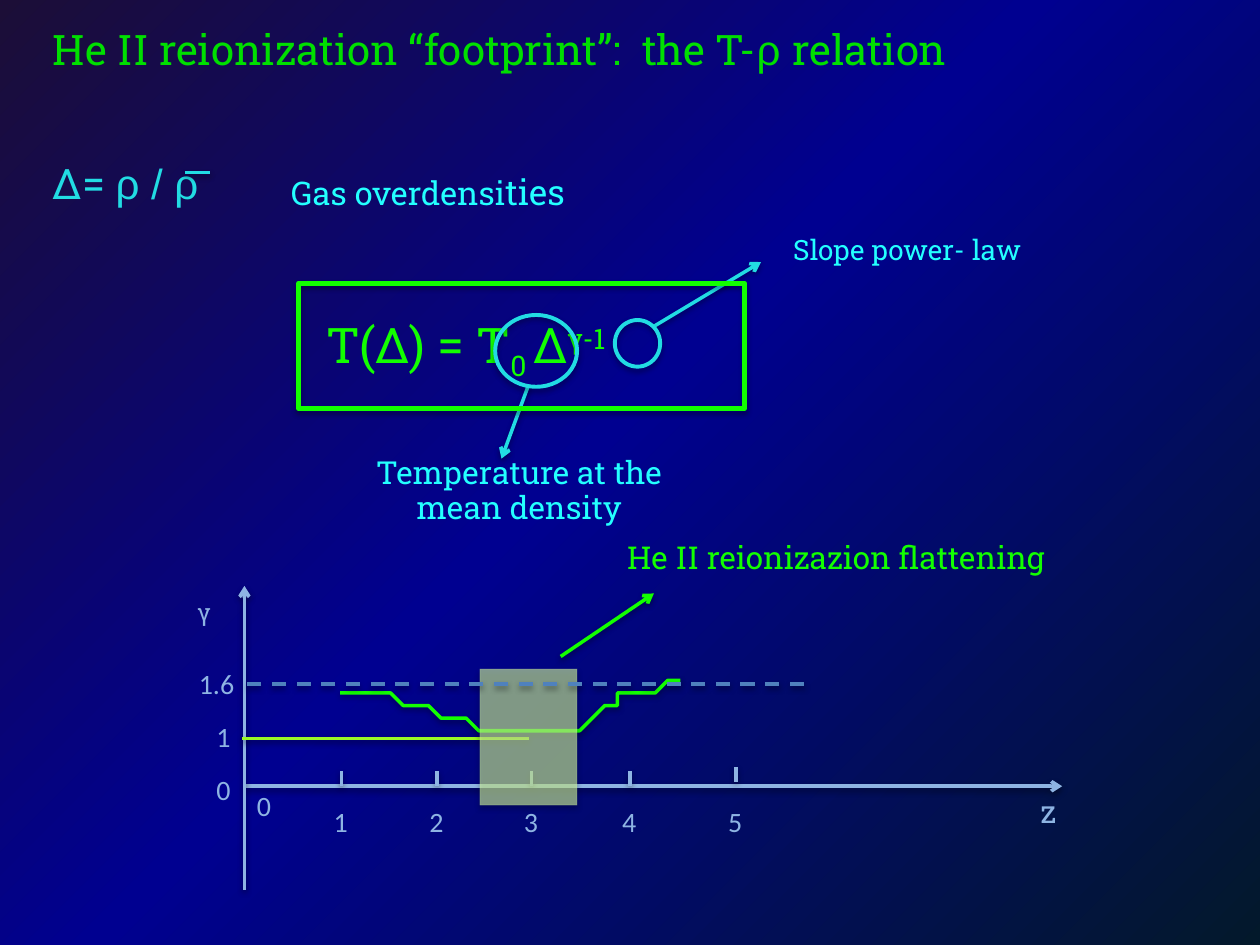
"""Build a slide on the temperature-density relation after He II reionization."""
from lxml import etree
from pptx import Presentation
from pptx import util as u
from pptx.dml.color import RGBColor
from pptx.enum import dml, shapes, text
from pptx.oxml import parse_xml
from pptx.oxml.ns import nsdecls, qn

TITLE_GREEN = RGBColor(0x00, 0xDF, 0x00)
GREEN = RGBColor(0x13, 0xFF, 0x00)
LIME = RGBColor(0x9A, 0xF8, 0x26)
PALE_LIME = RGBColor(0xD2, 0xF8, 0x9A)
CYAN = RGBColor(0x22, 0xDC, 0xE3)
BRIGHT_CYAN = RGBColor(0x24, 0xFF, 0xFF)
AXIS_BLUE = RGBColor(0x8E, 0xB4, 0xE3)
DASH_BLUE = RGBColor(0x4F, 0x81, 0xBD)
SLAB, SANS, LABEL = "Roboto Slab", "Arial", "Calibri"

prs = Presentation()
prs.slide_width, prs.slide_height = u.Inches(10), u.Inches(7.5)
GRID = prs.slide_width / 100
s = prs.slides.add_slide(prs.slide_layouts[5])

stops = "".join(
    f'<a:gs pos="{pos * 1000}"><a:srgbClr val="{color}"/></a:gs>'
    for pos, color in [(0, "1C0E37"), (47, "000090"), (100, "03192B")])
s.background.fill.solid()
bg_pr = s.background.fill._xPr
bg_pr.replace(bg_pr[0], parse_xml(
    f'<a:gradFill {nsdecls("a")} rotWithShape="1"><a:gsLst>{stops}</a:gsLst><a:path path="circle">'
    '<a:fillToRect r="100000" b="100000"/></a:path></a:gradFill>'))


def write(sp, runs, size, color, align=text.PP_ALIGN.LEFT):
    tf = sp.text_frame
    tf.word_wrap = True
    tf.auto_size = text.MSO_AUTO_SIZE.NONE
    tf.vertical_anchor = text.MSO_ANCHOR.TOP
    p = tf.paragraphs[0]
    p.alignment = align
    p.line_spacing = 0.92 if size == 18.1 else 1.0
    for words, font, base, *own_size in runs:
        r = p.add_run()
        r.text = words
        r.font.name = font
        r.font.size = u.Pt(own_size[0] if own_size else size)
        r.font.color.rgb = color
        if base:
            r._r.get_or_add_rPr().set("baseline", str(base * 1000))


def outline(sp, color, width, arrow=False, alpha=38, drop=20000):
    sp.line.color.rgb = color
    sp.line.width = u.Pt(width)
    if arrow:
        etree.SubElement(sp.line._get_or_add_ln(), qn("a:tailEnd")).set("type", "arrow")
    sp._element.spPr.append(parse_xml(
        f'<a:effectLst {nsdecls("a")}><a:outerShdw blurRad="40000" dist="{drop}" dir="5400000" '
        f'rotWithShape="0"><a:srgbClr val="000000"><a:alpha val="{alpha}000"/></a:srgbClr>'
        '</a:outerShdw></a:effectLst>'))


title = s.shapes.title
title.left, title.top, title.width, title.height = [int(v * GRID) for v in (3.2, 1.4, 94.1, 5)]
write(title, [("He II reionization “footprint”:  the T-", SLAB, 0), ("ρ ", SANS, 0),
              ("relation", SLAB, 0)], 24, TITLE_GREEN)

CENTER, LEFT = text.PP_ALIGN.CENTER, text.PP_ALIGN.LEFT
captions = [
    ((24.9, 24.5, 32.8, 5.7), [("T(Δ) = T", SLAB, 0), ("0 ", SLAB, -25), ("Δ", SLAB, 0),
                               ("γ-1", SLAB, 30)], 28, GREEN, LEFT),
    ((3.2, 12, 19.1, 5), [("Δ= ", SLAB, 0), ("ρ / ρ", SANS, 0)], 24, CYAN, LEFT),
    ((20.5, 13, 26.9, 5), [("Gas overdensi", SLAB, 0), ("ties", SLAB, 0, 20.1)],
     18.6, BRIGHT_CYAN, CENTER),
    ((25.5, 35.7, 31.4, 6.5), [("Temperature at the mean density", SLAB, 0)],
     18.1, BRIGHT_CYAN, CENTER),
    ((61.2, 18, 21.6, 5.1), [("Slope power- law", SLAB, 0)], 16, BRIGHT_CYAN, CENTER),
    ((48.8, 42.2, 42.4, 4), [("He II reionizazion flattening", SLAB, 0)], 18, GREEN, LEFT),
    ((81.6, 62.4, 3.7, 4), [("z", SLAB, 0)], 18, AXIS_BLUE, LEFT),
    ((14.7, 46.5, 3.7, 3.7), [("γ", SLAB, 30)], 24, AXIS_BLUE, LEFT),
]
lines = [
    (14.7, 13.7, 16.7, 13.7, CYAN, False),
    (41.9, 30.7, 39.8, 36.4, CYAN, True),
    (51.9, 25.9, 60.4, 20.8, CYAN, True),
    (19.4, 62.4, 84.3, 62.4, AXIS_BLUE, True),
    (19.4, 70.6, 19.4, 46.5, AXIS_BLUE, True),
    (19.2, 58.6, 42, 58.6, LIME, False),
    (44.5, 52.1, 51.9, 47.1, GREEN, True),
]
axis_labels = [("0", 19.4, 62.1), ("0", 16.2, 60.8), ("1", 16.2, 56.6), ("1.6", 14.8, 52.4)]
ticks = [(27.1, 61.2), (34.7, 61.2), (42.2, 61.2), (50, 61.2), (58.4, 60.9)]
for number, (x, y) in enumerate(ticks, 1):
    lines.append((x, y, x, y + 1.15, AXIS_BLUE, False))
    axis_labels.append((str(number), x - 1.6, 63.4))
for words, x, y in axis_labels:
    captions.append(((x, y, 6.3, 3.7), [(words, LABEL, 0)], 16, AXIS_BLUE, LEFT))

for box, runs, size, color, align in captions:
    write(s.shapes.add_textbox(*[int(v * GRID) for v in box]), runs, size, color, align)

for *ends, color, arrow in lines:
    line = s.shapes.add_connector(shapes.MSO_CONNECTOR.STRAIGHT, *[int(v * GRID) for v in ends])
    outline(line, color, 2, arrow)

curve = [(27, 54.7), (28.4, 54.8), (30, 55.1), (31, 55.3), (32.1, 55.6), (33.7, 56),
         (34.5, 56.3), (35.2, 56.6), (35.9, 57), (36.9, 57.4), (37.7, 57.7), (38.5, 57.9),
         (39.3, 58.1), (40.7, 58.2), (41.8, 58.25), (43.3, 58.1), (44.7, 57.8), (45.7, 57.5),
         (46.7, 57), (47.6, 56.3), (48.6, 55.7), (49.4, 55.4), (50.9, 54.9), (51.9, 54.6),
         (53, 54.4), (54.5, 54.3)]
fb = s.shapes.build_freeform(*curve[0], scale=GRID)
fb.add_line_segments(curve[1:], close=False)
slope_curve = fb.convert_to_shape()
slope_curve.fill.background()
outline(slope_curve, GREEN, 2)

RECT, OVAL = shapes.MSO_SHAPE.RECTANGLE, shapes.MSO_SHAPE.OVAL
for kind, box, color, width, fill in [
        (RECT, (23.7, 22.5, 35.4, 9.9), GREEN, 3, None),
        (OVAL, (39.3, 25, 6.5, 5.7), CYAN, 2.25, None),
        (OVAL, (48.8, 25.4, 3.6, 3.7), CYAN, 2.25, None),
        (RECT, (38.1, 53.1, 7.7, 10.8), PALE_LIME, 0.75, PALE_LIME)]:
    sp = s.shapes.add_shape(kind, *[int(v * GRID) for v in box])
    sp.fill.background()
    if fill:
        sp.fill.solid()
        sp.fill.fore_color.rgb = fill
    outline(sp, color, width, alpha=35, drop=23000)
    if fill:
        for tone, alpha in zip(sp._element.spPr.iter(qn("a:srgbClr")), (61, 15)):
            etree.SubElement(tone, qn("a:alpha")).set("val", f"{alpha}000")

dashed = s.shapes.add_connector(shapes.MSO_CONNECTOR.STRAIGHT,
                                *[int(v * GRID) for v in (63.8, 54.3, 19.2, 54.3)])
outline(dashed, DASH_BLUE, 2)
dashed.line.dash_style = dml.MSO_LINE.DASH

prs.save("out.pptx")
